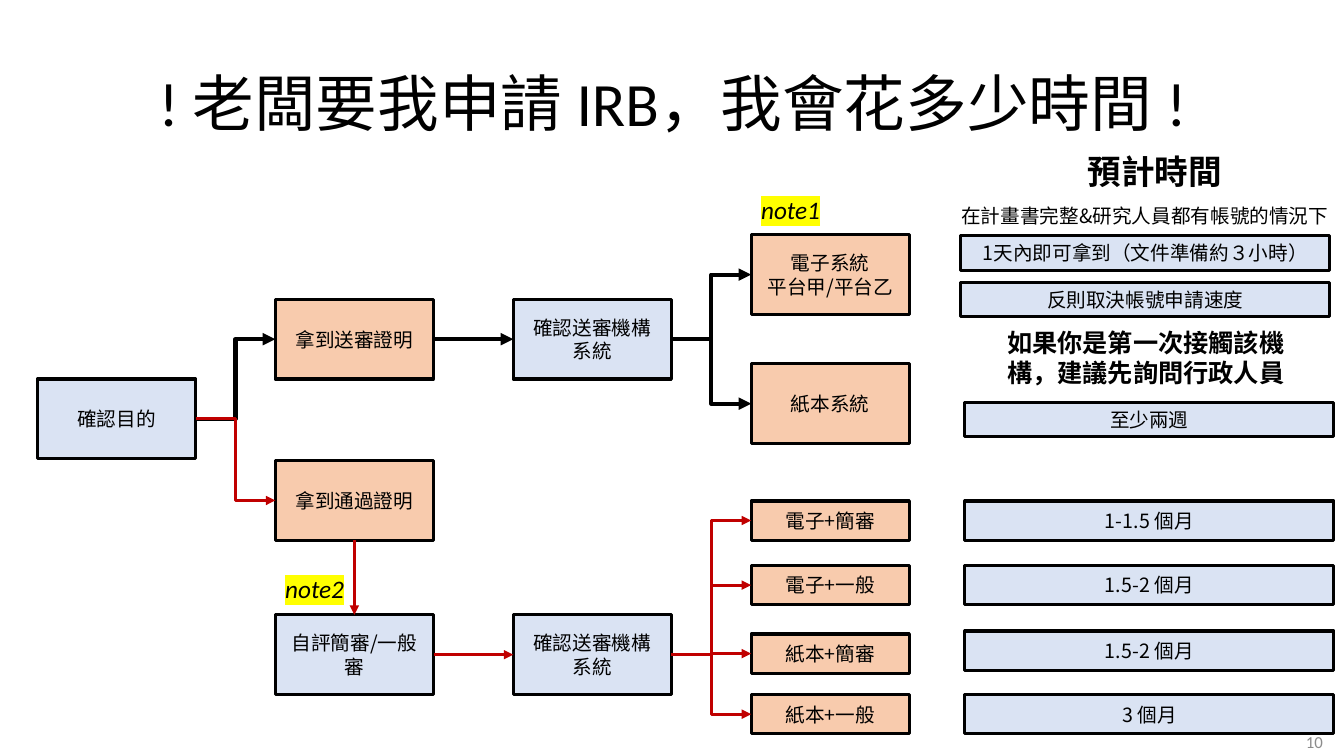
import pptx
import pptx.util
import pptx.dml.color
import pptx.enum.shapes
import pptx.enum.text
import pptx.oxml
import pptx.oxml.ns

PX = 9144  # 100 px to the inch
RGB = pptx.dml.color.RGBColor
BLACK = RGB(0x00, 0x00, 0x00)
RED = RGB(0xC0, 0x00, 0x00)
GREY = RGB(0x8C, 0x8C, 0x8C)
BLUE_FILL = RGB(0xDA, 0xE3, 0xF3)
ORANGE_FILL = RGB(0xF8, 0xCB, 0xAD)
YELLOW = RGB(0xFF, 0xFF, 0x00)

CJK = "Noto Sans CJK SC"
ALIGN = pptx.enum.text.PP_ALIGN
MIDDLE = pptx.enum.text.MSO_ANCHOR.MIDDLE
TOP = pptx.enum.text.MSO_ANCHOR.TOP
LINK = pptx.enum.shapes.MSO_CONNECTOR
TOP_SITE, LEFT_SITE, BOTTOM_SITE, RIGHT_SITE = range(4)

NODE_W, NODE_H, OPTION_H = 157, 79, 39
TIME_W, HINT_H = 366, 34
COLUMN_PITCH = 236


def add_xml(parent, tag, **attributes):
    child = pptx.oxml.parse_xml(f"<a:{tag} {pptx.oxml.ns.nsdecls('a')}/>")
    for name, value in attributes.items():
        child.set(name, value)
    parent.append(child)
    return child


def write(shape, text, size, font=CJK, color=BLACK, align=ALIGN.CENTER,
          anchor=MIDDLE, bold=False, italic=False):
    """Fill a shape with text, one paragraph a line."""
    frame = shape.text_frame
    frame.text = text
    frame.word_wrap = True
    frame.vertical_anchor = anchor
    for para in frame.paragraphs:
        para.alignment = align
        para.font.size = pptx.util.Pt(size)
        para.font.name = font
        para.font.color.rgb = color
        para.font.bold = bold
        para.font.italic = italic
        add_xml(para.font._element, "ea", typeface=CJK)
    return frame


def add_box(page, left, top, width, height, text, fill):
    box = page.shapes.add_shape(
        pptx.enum.shapes.MSO_SHAPE.RECTANGLE,
        left * PX, top * PX, width * PX, height * PX)
    box.shadow.inherit = False
    box.fill.solid()
    box.fill.fore_color.rgb = fill
    box.line.color.rgb = BLACK
    box.line.width = pptx.util.Pt(2.25)
    write(box, text, 14)
    return box


def add_label(page, left, top, width, height, text, size, **style):
    label = page.shapes.add_textbox(left * PX, top * PX, width * PX, height * PX)
    return write(label, text, size, **style)


def add_note(page, left, top, text):
    frame = add_label(page, left, top, 99, 40, text, 18, font="Calibri",
                      align=ALIGN.LEFT, anchor=TOP, italic=True)
    run_properties = frame.paragraphs[0].runs[0].font._element
    highlight = add_xml(run_properties, "highlight")
    add_xml(highlight, "srgbClr", val=str(YELLOW))


def add_arrow(page, source, target, color, width, kind=LINK.ELBOW,
              sites=(RIGHT_SITE, LEFT_SITE)):
    arrow = page.shapes.add_connector(kind, 0, 0, 0, 0)
    arrow.begin_connect(source, sites[0])
    arrow.end_connect(target, sites[1])
    arrow.line.color.rgb = color
    arrow.line.width = pptx.util.Pt(width)
    add_xml(arrow.line._get_or_add_ln(), "tailEnd", type="triangle")
    add_xml(arrow._element.spPr, "effectLst")


def add_title(page, left, top, width, height):
    title = page.shapes.title
    title.left, title.top = left * PX, top * PX
    title.width, title.height = width * PX, height * PX
    frame = write(title, "! 老闆要我申請 IRB，我會花多少時間 !", 44, font="Calibri")
    frame.auto_size = pptx.enum.text.MSO_AUTO_SIZE.NONE
    frame.paragraphs[0].line_spacing = 0.9


def add_flow(page, left, top):
    """Place the decision tree from its top left corner."""
    columns = [left + COLUMN_PITCH * step for step in range(4)]

    def node(column, offset, text, fill, height=NODE_H):
        return add_box(page, columns[column], top + offset, NODE_W, height, text, fill)

    purpose = node(0, 143, "確認目的", BLUE_FILL)
    submitted = node(1, 64, "拿到送審證明", ORANGE_FILL)
    approved = node(1, 224, "拿到通過證明", ORANGE_FILL)
    review = node(1, 377, "自評簡審/一般審", BLUE_FILL)
    submit_system, review_system = [
        node(2, offset, "確認送審機構\n系統", BLUE_FILL) for offset in (64, 377)]
    systems = [node(3, 0, "電子系統\n平台甲/平台乙", ORANGE_FILL),
               node(3, 128, "紙本系統", ORANGE_FILL)]
    options = [node(3, offset, text, ORANGE_FILL, OPTION_H) for offset, text in (
        (264, "電子+簡審"), (328, "電子+一般"), (396, "紙本+簡審"), (456, "紙本+一般"))]

    add_arrow(page, purpose, submitted, BLACK, 3)
    add_arrow(page, submitted, submit_system, BLACK, 3, LINK.STRAIGHT)
    for system in systems:
        add_arrow(page, submit_system, system, BLACK, 3)

    add_arrow(page, purpose, approved, RED, 2.25)
    add_arrow(page, approved, review, RED, 2.25, LINK.STRAIGHT, (BOTTOM_SITE, TOP_SITE))
    add_arrow(page, review, review_system, RED, 2.25, LINK.STRAIGHT)
    for option in options:
        add_arrow(page, review_system, option, RED, 2.25)

    add_note(page, columns[3], top - 45, "note1")
    add_note(page, columns[1], top + 331, "note2")


def add_times(page, left, top):
    """Place the column of expected times from its top left corner."""
    add_label(page, left + 131, top, 167, 50, "預計時間", 24, font="Noto Sans Mono",
              align=ALIGN.LEFT, anchor=TOP, bold=True)
    add_label(page, left, top + 52, 395, 34,
              "在計畫書完整&研究人員都有帳號的情況下", 14, anchor=TOP)
    add_label(page, left + 51, top + 175, 300, 71,
              "如果你是第一次接觸該機構，建議先詢問行政人員", 18, font="Calibri",
              align=ALIGN.LEFT, anchor=TOP, bold=True)
    for indent, offset, height, text in (
            (15, 89, HINT_H, "1天內即可拿到（文件準備約３小時）"),
            (15, 135, HINT_H, "反則取決帳號申請速度"),
            (19, 254, HINT_H, "至少兩週"),
            (19, 352, OPTION_H, "1-1.5 個月"),
            (19, 416, OPTION_H, "1.5-2 個月"),
            (19, 481, OPTION_H, "1.5-2 個月"),
            (19, 544, OPTION_H, "3 個月")):
        add_box(page, left + indent, top + offset, TIME_W, height, text, BLUE_FILL)


def main():
    deck = pptx.Presentation()
    deck.slide_width, deck.slide_height = 1333 * PX, 750 * PX
    page = deck.slides.add_slide(deck.slide_layouts.get_by_name("Title Only"))
    add_title(page, 92, 33, 1150, 145)
    add_flow(page, 37, 233)
    add_times(page, 938, 145)
    add_label(page, 1022, 716, 300, 40, "10", 12, font="Calibri", color=GREY,
              align=ALIGN.RIGHT)
    deck.save("out.pptx")


if __name__ == "__main__":
    main()
